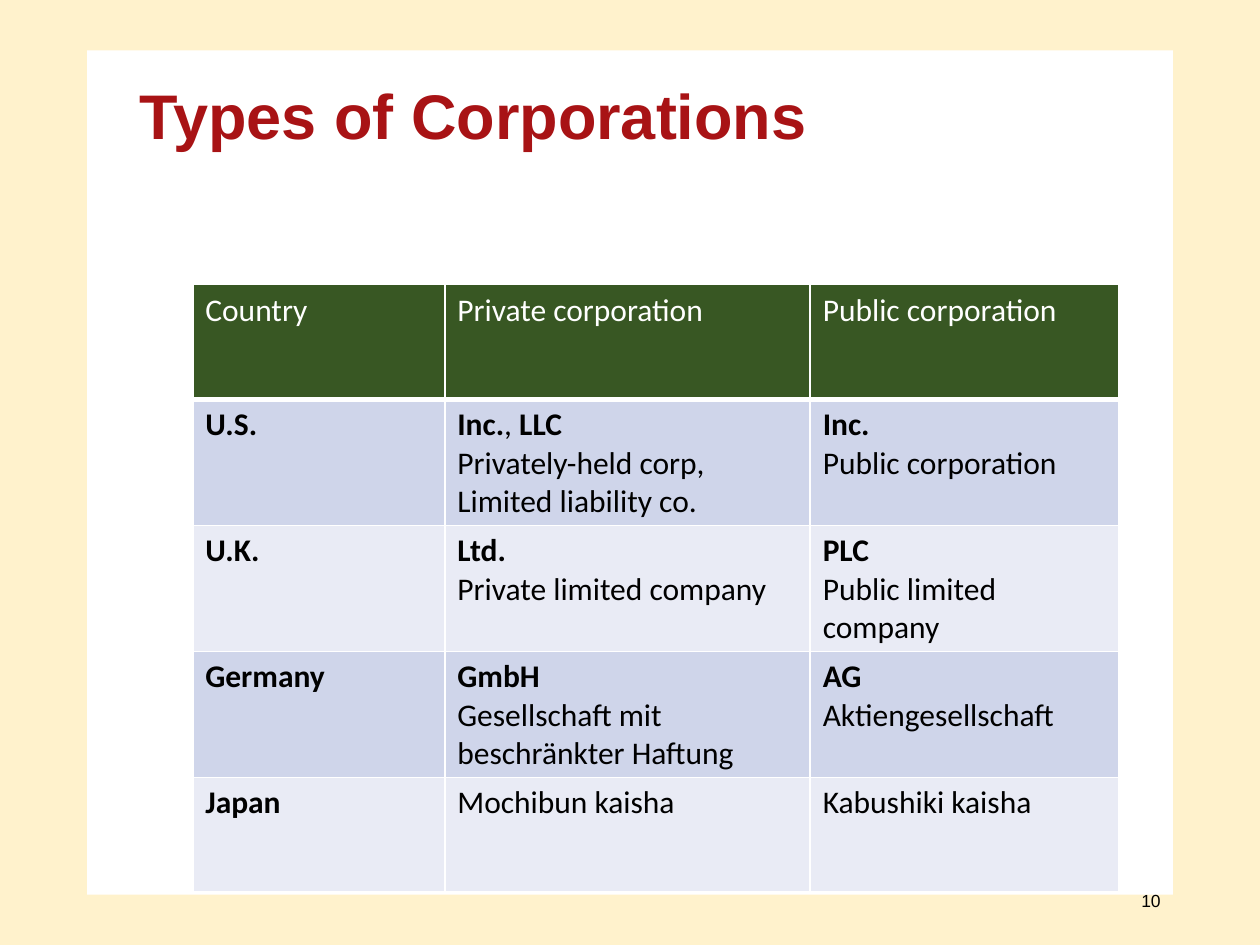
"""Build the slide comparing private and public corporation types by country."""
from dataclasses import dataclass

from lxml.etree import SubElement
from pptx import Presentation
from pptx.dml.color import RGBColor
from pptx.enum.shapes import MSO_SHAPE
from pptx.enum.text import MSO_ANCHOR, PP_ALIGN
from pptx.oxml.ns import qn
from pptx.slide import Slide
from pptx.table import _Cell
from pptx.text.text import _Paragraph
from pptx.util import Emu, Inches, Pt

SLIDE_WIDTH, SLIDE_HEIGHT = Inches(10), Inches(7.5)
CREAM = RGBColor(0xFF, 0xF2, 0xCC)
CRIMSON = RGBColor(0xA8, 0x13, 0x15)
FOREST = RGBColor(0x38, 0x57, 0x23)
BAND_DARK = RGBColor(0xCF, 0xD5, 0xEA)
BAND_LIGHT = RGBColor(0xE9, 0xEB, 0xF5)
WHITE = RGBColor(0xFF, 0xFF, 0xFF)
BLACK = RGBColor(0x00, 0x00, 0x00)

BOLD_MARK, BREAK_MARK = "*", "\v"
COLUMN_WIDTHS = (2, 2.9, 2.45)
ROW_HEIGHTS = (0.91, 1, 1, 1, 0.91)
CORPORATIONS = (
    ("Country", "Private corporation", "Public corporation"),
    ("*U.S.*", "*Inc.*, *LLC*\nPrivately-held corp,\vLimited liability co.", "*Inc.*\nPublic corporation"),
    ("*U.K.*", "*Ltd.*\vPrivate limited company", "*PLC*\vPublic limited company"),
    ("*Germany*", "*GmbH*\vGesellschaft mit beschränkter Haftung", "*AG*\vAktiengesellschaft"),
    ("*Japan*", "Mochibun kaisha", "Kabushiki kaisha"),
)


@dataclass(frozen=True)
class Area:
    """A rectangle in shares of the slide's width and height."""

    left: float
    top: float
    width: float
    height: float

    def box(self) -> tuple[Emu, Emu, Emu, Emu]:
        """Return the rectangle as slide lengths."""
        return (
            Emu(round(self.left * SLIDE_WIDTH)),
            Emu(round(self.top * SLIDE_HEIGHT)),
            Emu(round(self.width * SLIDE_WIDTH)),
            Emu(round(self.height * SLIDE_HEIGHT)),
        )


@dataclass(frozen=True)
class Caption:
    """A single line of text with its place and look."""

    text: str
    area: Area
    size: int
    color: RGBColor
    bold: bool
    align: PP_ALIGN
    anchor: MSO_ANCHOR


SIDE, EDGE = 0.069, 0.4 / 7.5
FRAME = (
    Area(0, 0, SIDE, 1),
    Area(1 - SIDE, 0, SIDE, 1),
    Area(SIDE, 0, 1 - 2 * SIDE, EDGE),
    Area(SIDE, 1 - EDGE, 1 - 2 * SIDE, EDGE),
)
PAGE_NUMBER = Caption("10", Area(0.706, 6.95 / 7.5, 0.225, EDGE), 10, BLACK, False,
                      PP_ALIGN.RIGHT, MSO_ANCHOR.MIDDLE)
TITLE = Caption("Types of Corporations", Area(0.101, 0, 0.9, 1.26 / 7.5), 36, CRIMSON, True,
                PP_ALIGN.LEFT, MSO_ANCHOR.BOTTOM)
TABLE_AREA = Area(0.153, 2.26 / 7.5, sum(COLUMN_WIDTHS) / 10, sum(ROW_HEIGHTS) / 7.5)


def draw_band(slide: Slide, area: Area) -> None:
    """Draw one plain band of the slide's frame."""
    band = slide.shapes.add_shape(MSO_SHAPE.RECTANGLE, *area.box())
    band.shadow.inherit = False
    band.fill.solid()
    band.fill.fore_color.rgb = CREAM
    band.line.fill.background()


def draw_caption(slide: Slide, caption: Caption) -> None:
    """Draw a caption in a wrapping text box."""
    frame = slide.shapes.add_textbox(*caption.area.box()).text_frame
    frame.word_wrap = True
    frame.vertical_anchor = caption.anchor
    frame.text = caption.text
    paragraph = frame.paragraphs[0]
    paragraph.alignment = caption.align
    font = paragraph.runs[0].font
    font.name, font.size, font.bold = "Arial", Pt(caption.size), caption.bold
    font.color.rgb = caption.color


def write_marked_text(paragraph: _Paragraph, marked: str, color: RGBColor) -> None:
    """Write text whose marked spans are bold and whose break marks end lines."""
    for line_index, line in enumerate(marked.split(BREAK_MARK)):
        if line_index:
            paragraph.add_line_break()
        for span_index, span in enumerate(line.split(BOLD_MARK)):
            if span:
                run = paragraph.add_run()
                run.text = span
                font = run.font
                font.name, font.size, font.bold = "Calibri", Pt(18), span_index % 2 == 1
                font.color.rgb = color


def draw_borders(cell: _Cell, bottom_width: float) -> None:
    """Give a cell white borders with the chosen bottom width."""
    properties = cell._tc.get_or_add_tcPr()
    for side, width in (("L", 1), ("R", 1), ("T", 1), ("B", bottom_width)):
        border = SubElement(properties, qn(f"a:ln{side}"), w=str(Pt(width)))
        SubElement(SubElement(border, qn("a:solidFill")), qn("a:srgbClr"), val=str(WHITE))


def fill_cell(cell: _Cell, marked: str, row_index: int) -> None:
    """Write and colour one table cell according to its row."""
    is_header = row_index == 0
    draw_borders(cell, 3 if is_header else 1)
    cell.fill.solid()
    cell.fill.fore_color.rgb = FOREST if is_header else (BAND_LIGHT, BAND_DARK)[row_index % 2]
    frame = cell.text_frame
    for index, entry in enumerate(marked.split("\n")):
        paragraph = frame.add_paragraph() if index else frame.paragraphs[0]
        write_marked_text(paragraph, entry, WHITE if is_header else BLACK)


def draw_table(slide: Slide) -> None:
    """Draw the table of corporation types."""
    table = slide.shapes.add_table(len(ROW_HEIGHTS), len(COLUMN_WIDTHS), *TABLE_AREA.box()).table
    for column, width in zip(table.columns, COLUMN_WIDTHS):
        column.width = Inches(width)
    for row_index, (row, height) in enumerate(zip(table.rows, ROW_HEIGHTS)):
        row.height = Inches(height)
        for cell, marked in zip(row.cells, CORPORATIONS[row_index]):
            fill_cell(cell, marked, row_index)


def main() -> None:
    """Build and save the slide."""
    presentation = Presentation()
    presentation.slide_width, presentation.slide_height = SLIDE_WIDTH, SLIDE_HEIGHT
    slide = presentation.slides.add_slide(presentation.slide_layouts[6])
    for area in FRAME:
        draw_band(slide, area)
    draw_caption(slide, PAGE_NUMBER)
    draw_table(slide)
    draw_caption(slide, TITLE)
    presentation.save("out.pptx")


if __name__ == "__main__":
    main()
